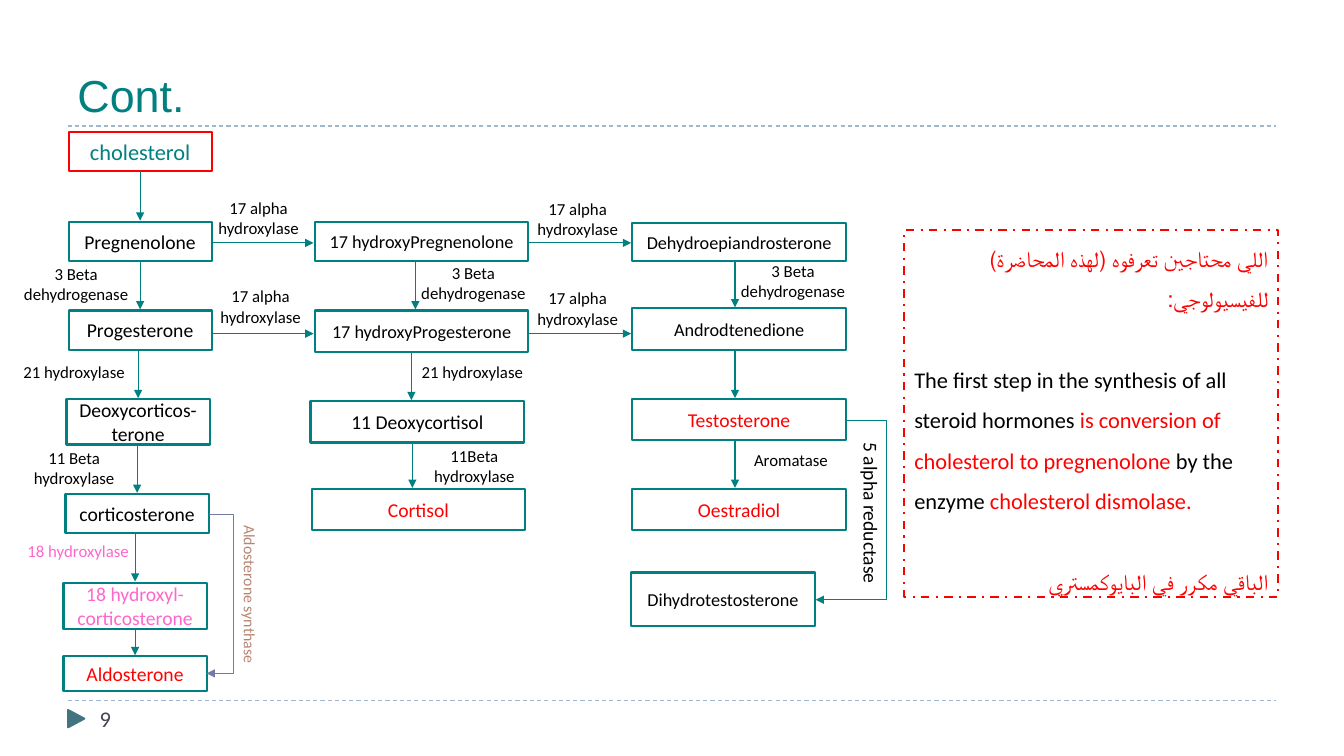
import pptx
import pptx.util
import pptx.dml.color
import pptx.enum.dml
import pptx.enum.shapes
import pptx.enum.text
import pptx.oxml

Inches = pptx.util.Inches
Pt = pptx.util.Pt
SHAPE = pptx.enum.shapes.MSO_SHAPE
CONNECTOR = pptx.enum.shapes.MSO_CONNECTOR
DASH = pptx.enum.dml.MSO_LINE
ALIGN = pptx.enum.text.PP_ALIGN
ANCHOR = pptx.enum.text.MSO_ANCHOR

COLORS = {
    "teal": "008080", "red": "FF0000", "black": "000000", "pink": "FF66CC",
    "brown": "B88472", "violet": "727CA3", "rule": "9FB8CD",
    "marker": "427380", "number": "464653",
}

COLUMNS = [
    {"arrow_shift": 0, "boxes": [
        ("cholesterol", 0.68, 1.31, 1.42, 0.39, 16, "teal", "red"),
        ("Pregnenolone", 0.68, 2.2, 1.42, 0.39, 14, "black", "teal"),
        ("Progesterone", 0.68, 3.08, 1.42, 0.39, 14, "black", "teal"),
        ("Deoxycorticos-terone", 0.66, 3.96, 1.42, 0.45, 14, "black", "teal"),
        ("corticosterone", 0.65, 4.9, 1.42, 0.39, 14, "black", "teal"),
        ("18 hydroxyl-corticosterone", 0.63, 5.78, 1.42, 0.46, 14, "pink", "teal"),
        ("Aldosterone", 0.63, 6.51, 1.42, 0.35, 14, "red", "teal"),
    ]},
    {"arrow_shift": -0.06, "boxes": [
        ("17 hydroxyPregnenolone", 3.12, 2.2, 2.12, 0.39, 13, "black", "teal"),
        ("17 hydroxyProgesterone", 3.12, 3.08, 2.12, 0.41, 13, "black", "teal"),
        ("11 Deoxycortisol", 3.08, 3.98, 2.12, 0.41, 14, "black", "teal"),
        ("Cortisol", 3.09, 4.85, 2.12, 0.41, 14, "red", "teal"),
    ]},
    {"arrow_shift": -0.04, "boxes": [
        ("Dehydroepiandrosterone", 6.27, 2.21, 2.12, 0.38, 13, "black", "teal"),
        ("Androdtenedione", 6.27, 3.06, 2.12, 0.41, 13, "black", "teal"),
        ("Testosterone", 6.27, 3.96, 2.12, 0.41, 14, "red", "teal"),
        ("Oestradiol", 6.27, 4.85, 2.12, 0.41, 14, "red", "teal"),
    ]},
    {"arrow_shift": 0, "boxes": [
        ("Dihydrotestosterone", 6.26, 5.68, 1.82, 0.53, 13, "black", "teal"),
    ]},
]
ROW_ARROWS = [2.41, 3.31]
COLUMN_GAPS = [(2.1, 3.11), (5.24, 6.26)]

ENZYMES = [
    ("17 alpha hydroxylase", 2.05, 1.91, 1.03, 0.5),
    ("17 alpha hydroxylase", 5.23, 1.92, 1, 0.5),
    ("17 alpha hydroxylase", 2.07, 2.79, 1.03, 0.5),
    ("17 alpha hydroxylase", 5.23, 2.81, 1, 0.5),
    ("3 Beta dehydrogenase", 0.13, 2.57, 1.25, 0.5),
    ("3 Beta dehydrogenase", 4.07, 2.56, 1.25, 0.5),
    ("3 Beta dehydrogenase", 7.24, 2.54, 1.25, 0.5),
    ("21 hydroxylase", 0.11, 3.54, 1.25, 0.3),
    ("21 hydroxylase", 4.06, 3.54, 1.25, 0.3),
    ("11 Beta hydroxylase", 0.11, 4.39, 1.25, 0.5),
    ("11Beta hydroxylase", 4.08, 4.37, 1.25, 0.5),
    ("Aromatase", 7.22, 4.41, 1.25, 0.3),
]
REDUCTASE_PATH = [(8.39, 4.17), (8.79, 4.17), (8.79, 5.95), (8.09, 5.95)]

NOTE = [
    (True, 0, [("اللي محتاجين تعرفوه (لهذه المحاضرة) للفيسيولوجي:", "red")]),
    (False, 29, [
        ("The first step in the synthesis of all steroid hormones ", "black"),
        ("is conversion of cholesterol to pregnenolone", "red"),
        (" by the enzyme ", "black"),
        ("cholesterol dismolase.", "red"),
    ]),
    (True, 29, [("الباقي مكرر في البايوكمستري", "red")]),
]

deck = pptx.Presentation()
deck.slide_width, deck.slide_height = Inches(13.33), Inches(7.5)
page = deck.slides.add_slide(deck.slide_layouts[6])


def color(name):
    return pptx.dml.color.RGBColor.from_string(COLORS[name])


def add_child(parent, tag, **attributes):
    child = pptx.oxml.parse_xml(
        f'<a:{tag} xmlns:a="http://schemas.openxmlformats.org/drawingml/2006/main"/>')
    for name, value in attributes.items():
        child.set(name, value)
    parent.append(child)


def add_span(para, text, size, tint, font="Calibri"):
    span = para.add_run()
    span.text = text
    span.font.name, span.font.size = font, Pt(size)
    span.font.color.rgb = color(tint)


def write(box, text, size=12, tint="black", font="Calibri", align=ALIGN.CENTER,
          anchor=ANCHOR.TOP):
    frame = box.text_frame
    frame.word_wrap, frame.vertical_anchor = True, anchor
    para = frame.paragraphs[0]
    para.alignment = align
    add_span(para, text, size, tint, font)


def add_text(text, *place, rotation=0, **style):
    box = page.shapes.add_textbox(*map(Inches, place))
    box.rotation = rotation
    write(box, text, **style)


def add_frame(place, edge, dash=None):
    box = page.shapes.add_shape(SHAPE.RECTANGLE, *map(Inches, place))
    box.shadow.inherit = False
    box.fill.background()
    box.line.color.rgb, box.line.width = color(edge), Pt(1.5)
    if dash:
        box.line.dash_style = dash
    return box


def add_line(start, end, tint="teal", dash=None, arrow=False, kind=CONNECTOR.STRAIGHT):
    line = page.shapes.add_connector(kind, *map(Inches, (*start, *end)))
    line.line.color.rgb, line.line.width = color(tint), Pt(0.75)
    if dash:
        line.line.dash_style = dash
    if arrow:
        add_child(line.line._get_or_add_ln(), "tailEnd", type="triangle")
    add_child(line._element.spPr, "effectLst")
    return line


for y in (1.25, 6.95):
    add_line((0.67, y), (12.66, y), tint="rule", dash=DASH.DASH)
add_text("Cont.", 0.67, 0.17, 12, 1.08, size=32, tint="teal", font="Arial",
         align=ALIGN.LEFT, anchor=ANCHOR.BOTTOM)
add_text("9", 0.89, 6.95, 2.89, 0.4, size=16, tint="number", align=ALIGN.LEFT)
marker = page.shapes.add_shape(
    SHAPE.ISOSCELES_TRIANGLE, *map(Inches, (0.67, 7.05, 0.17, 0.16)))
marker.rotation = 90
marker.shadow.inherit = False
marker.fill.solid()
marker.fill.fore_color.rgb = marker.line.color.rgb = color("marker")
marker.line.width = Pt(1.5)

for column in COLUMNS:
    boxes = column["boxes"]
    for text, left, top, width, height, size, tint, edge in boxes:
        write(add_frame((left, top, width, height), edge), text, size=size, tint=tint,
              anchor=ANCHOR.MIDDLE)
    for upper, lower in zip(boxes, boxes[1:]):
        x = lower[1] + lower[3] / 2 + column["arrow_shift"]
        add_line((x, upper[2] + upper[4]), (x, lower[2] - 0.01), arrow=True)

for y in ROW_ARROWS:
    for left, right in COLUMN_GAPS:
        add_line((left, y), (right, y), arrow=True)

for text, *place in ENZYMES:
    add_text(text, *place)
add_text("18 hydroxylase", 0.15, 5.32, 1.25, 0.3, tint="pink")
add_text("5 alpha reductase", 7.79, 4.92, 1.7, 0.34, rotation=90, size=14)
add_text("Aldosterone synthase", 1.69, 5.75, 1.58, 0.29, rotation=90, size=11.3,
         tint="brown")

for start, end in zip(REDUCTASE_PATH, REDUCTASE_PATH[1:]):
    add_line(start, end, arrow=end == REDUCTASE_PATH[-1])

synthase = add_line((2.07, 5.1), (2.05, 6.68), tint="violet", arrow=True,
                    kind=CONNECTOR.ELBOW)
add_child(synthase._element.spPr.prstGeom.get_or_add_avLst(), "gd",
          name="adj1", fmla="val -1250000")

note = add_frame((8.97, 2.28, 3.71, 3.64), "red", dash=DASH.DASH_DOT).text_frame
note.word_wrap, note.vertical_anchor = True, ANCHOR.MIDDLE
for index, (arabic, gap, spans) in enumerate(NOTE):
    para = note.add_paragraph() if index else note.paragraphs[0]
    para.alignment = ALIGN.RIGHT if arabic else ALIGN.LEFT
    para.line_spacing, para.space_before = 1.5, Pt(gap)
    if arabic:
        para._p.get_or_add_pPr().set("rtl", "1")
    for text, tint in spans:
        add_span(para, text, 16, tint)

deck.save("out.pptx")
